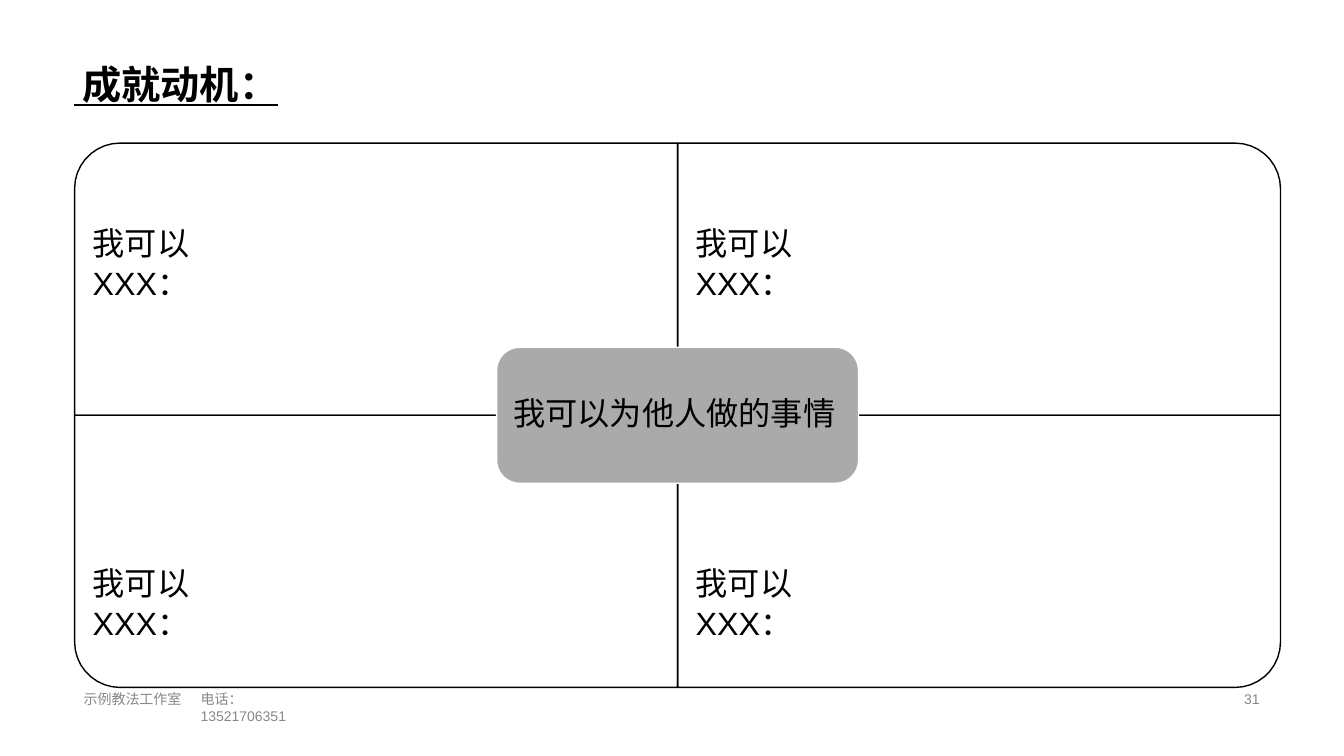
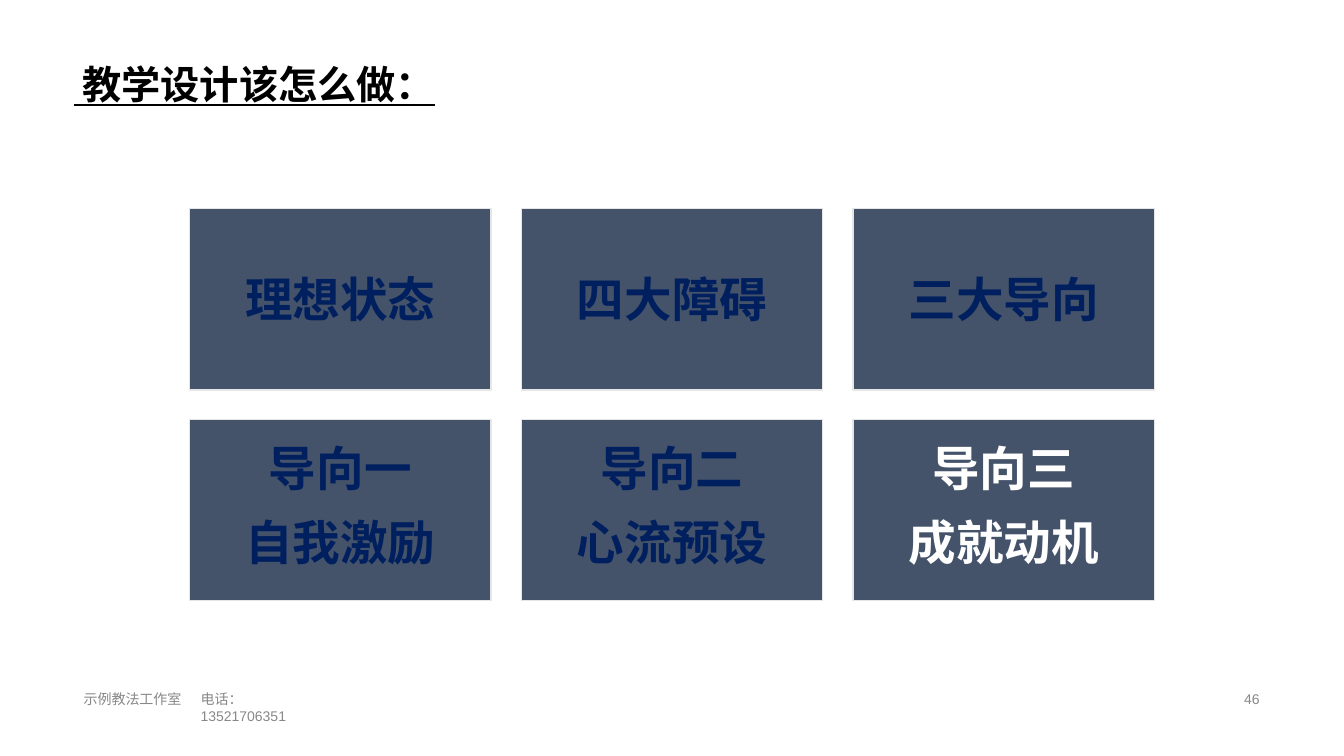
"""Build two teaching-design slides with a shared title and footer."""
import math
from dataclasses import dataclass
from itertools import product

from lxml import etree
from pptx import Presentation
from pptx import util as u
from pptx.dml.color import RGBColor
from pptx.enum import lang, shapes, text
from pptx.oxml.ns import qn


@dataclass(frozen=True)
class Theme:
    """Colours, fonts and type sizes."""
    ink: str = "000000"
    muted: str = "888888"
    white: str = "FFFFFF"
    grey: str = "AAAAAA"
    slate: str = "44536A"
    edge: str = "E7E6E6"
    navy: str = "001F5F"
    latin: str = "Arial"
    serif: str = "Times New Roman"
    chinese: str = "Noto Sans CJK SC"
    title: float = 28
    body: float = 23
    card: float = 34
    footer: float = 10
    leading: float = 1.24


THEME = Theme()
SHAPE = shapes.MSO_SHAPE
CENTER = text.PP_ALIGN.CENTER


def write(box, lines, size, color, latin=THEME.latin, bold=None,
          underline=None, align=None, gap=0, right=0, bottom=0):
    """Fill a box with one formatted paragraph for each line."""
    frame = box.text_frame
    frame.margin_left = frame.margin_top = 0
    frame.margin_right, frame.margin_bottom = u.Inches(right), u.Inches(bottom)
    frame.word_wrap = True
    frame.text = "\n".join(lines)
    for index, para in enumerate(frame.paragraphs):
        para.alignment = align
        para.line_spacing = u.Pt(round(size * THEME.leading, 1))
        if index:
            para.space_before = u.Pt(gap)
        for span in para.runs:
            font = span.font
            font.size, font.bold, font.underline = u.Pt(size), bold, underline
            font.name = latin
            font.color.rgb = RGBColor.from_string(color)
            font.language_id = lang.MSO_LANGUAGE_ID.SIMPLIFIED_CHINESE
            east_asian = etree.SubElement(span._r.get_or_add_rPr(), qn("a:ea"))
            east_asian.set("typeface", THEME.chinese)


def add_text(page, left, top, width, height, line, size, color, **style):
    """Add a text box holding one line of text."""
    box = page.shapes.add_textbox(*map(u.Inches, (left, top, width, height)))
    write(box, [line], size, color, **style)


def paint(block, line, fill=None):
    """Give a flat shape its outline and optional fill."""
    block.shadow.inherit = False
    block.line.color.rgb = RGBColor.from_string(line)
    block.line.width = u.Pt(1)
    if fill:
        block.fill.solid()
        block.fill.fore_color.rgb = RGBColor.from_string(fill)
    else:
        block.fill.background()


def add_block(page, kind, left, top, width, height, line, fill, radius=0):
    """Add a filled shape, with a corner radius in inches."""
    block = page.shapes.add_shape(kind, *map(u.Inches, (left, top, width, height)))
    paint(block, line, fill)
    if radius:
        block.adjustments[0] = radius / min(width, height)
    block.text_frame.vertical_anchor = text.MSO_ANCHOR.MIDDLE
    return block


def add_pane(page, center_x, center_y, width, height, radius):
    """Outline a pane from the centre outwards, its far corner rounded."""
    side_x, side_y = math.copysign(1, width), math.copysign(1, height)
    corner_x = center_x + width - side_x * radius
    corner_y = center_y + height - side_y * radius
    angles = [math.radians(degrees) for degrees in range(0, 91, 10)]
    arc = [(corner_x + side_x * radius * math.cos(angle),
            corner_y + side_y * radius * math.sin(angle)) for angle in angles]
    points = [(center_x + width, center_y), *arc, (center_x, center_y + height)]
    builder = page.shapes.build_freeform(u.Inches(center_x), u.Inches(center_y))
    builder.add_line_segments([(u.Inches(x), u.Inches(y)) for x, y in points])
    paint(builder.convert_to_shape(), THEME.ink)


def add_page(deck, title, number):
    """Add a blank page with the shared title and footer."""
    page = deck.slides.add_slide(deck.slide_layouts[6])
    add_text(page, 0.73, 0.58, 11.88, 0.49, f" {title}", THEME.title, THEME.ink,
             latin=THEME.serif, bold=True, underline=True)
    footers = [(0.83, 1.1, "示例教法工作室"), (1.99, 1.1, "电话：13521706351"),
               (12.34, 0.25, number)]
    for left, width, line in footers:
        add_text(page, left, 6.84, width, 0.21, line, THEME.footer, THEME.muted)
    return page


def add_quadrants(page, label, answer):
    """Draw four answer panes around a central label."""
    center_x, center_y = 6.72, 4.12
    pane_width, pane_height = 5.98, 2.7
    for side_x, side_y in product((-1, 1), repeat=2):
        add_pane(page, center_x, center_y, side_x * pane_width,
                 side_y * pane_height, 0.45)
    for x, y in product((0.92, 6.9), (2.2, 5.58)):
        add_text(page, x, y, 1.4, 0.8, answer, THEME.body, THEME.ink)
    hub_width, hub_height = 3.59, 1.35
    hub = add_block(page, SHAPE.ROUNDED_RECTANGLE, center_x - hub_width / 2,
                    center_y - hub_height / 2, hub_width, hub_height,
                    THEME.white, THEME.grey, radius=0.23)
    write(hub, [label], THEME.body, THEME.ink, align=CENTER, right=0.06, bottom=0.06)


def add_cards(page, rows, highlight):
    """Lay out a grid of cards, with one card in white text."""
    width, height = 2.99, 1.8
    step_x, step_y = width + 0.3, height + 0.29
    for row, cards in enumerate(rows):
        for column, lines in enumerate(cards):
            card = add_block(page, SHAPE.RECTANGLE, 1.88 + column * step_x,
                             2.07 + row * step_y, width, height,
                             THEME.edge, THEME.slate)
            color = THEME.white if (row, column) == highlight else THEME.navy
            write(card, lines, THEME.card, color, bold=True, align=CENTER,
                  gap=10.7, bottom=0.04 if len(lines) == 1 else 0.13)


def main():
    """Build and save the deck."""
    deck = Presentation()
    deck.slide_width, deck.slide_height = u.Inches(13.33), u.Inches(7.5)
    page = add_page(deck, "成就动机：", "31")
    add_quadrants(page, "我可以为他人做的事情", "我可以XXX：")
    page = add_page(deck, "教学设计该怎么做：", "46")
    add_cards(page, [
        [["理想状态"], ["四大障碍"], ["三大导向"]],
        [["导向一", "自我激励"], ["导向二", "心流预设"], ["导向三", "成就动机"]],
    ], highlight=(1, 2))
    deck.save("out.pptx")


if __name__ == "__main__":
    main()
